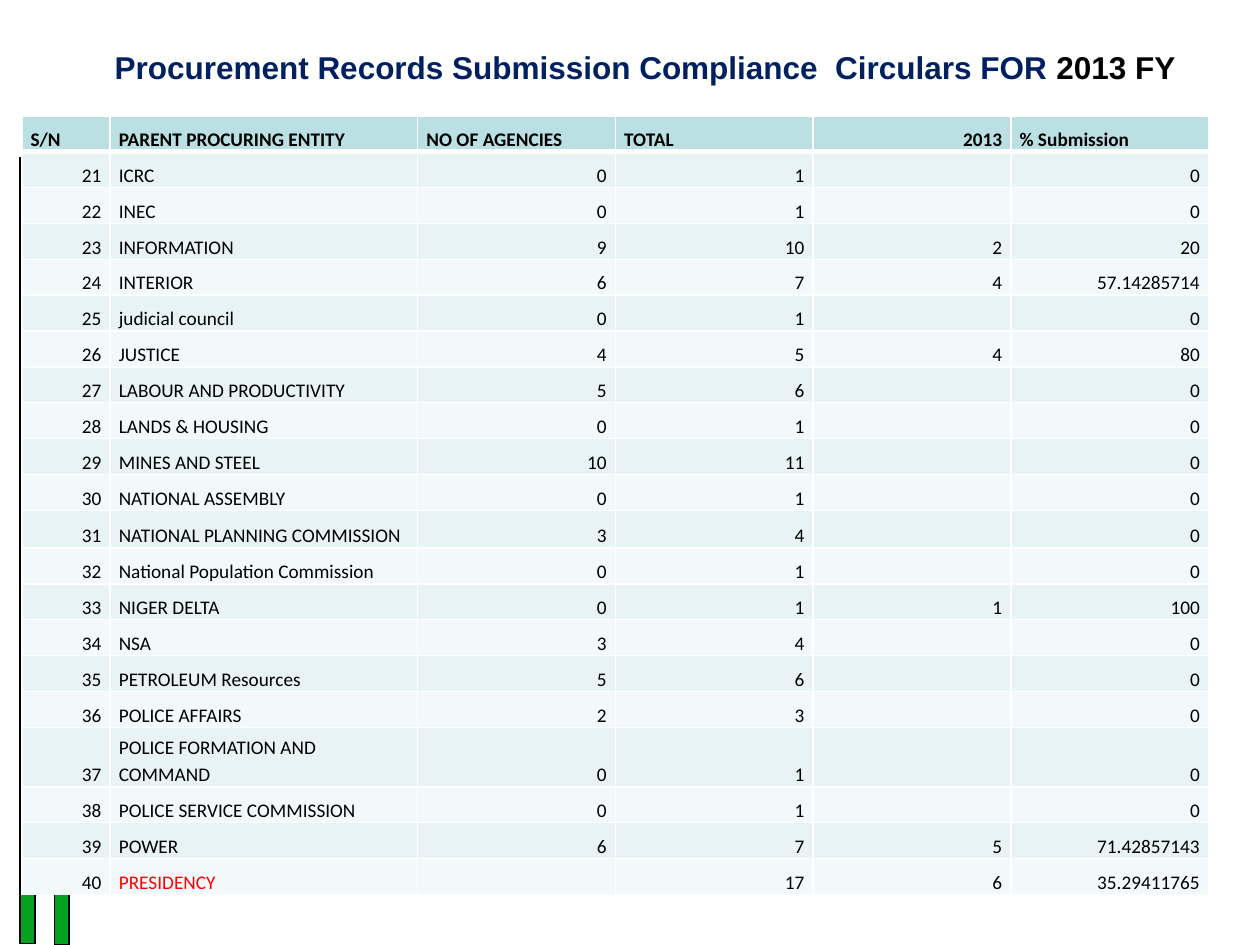
from pptx import Presentation
from pptx.dml.color import RGBColor as RGB
from pptx.enum.shapes import MSO_SHAPE as SHAPE
from pptx.enum.text import MSO_ANCHOR as ANCHOR, PP_ALIGN as ALIGN
from pptx.oxml import parse_xml
from pptx.oxml.ns import nsdecls
from pptx.util import Pt


class Theme:
    navy = RGB(0x00, 0x20, 0x60)
    black = RGB(0x00, 0x00, 0x00)
    red = RGB(0xFF, 0x00, 0x00)
    green = RGB(0x07, 0xA1, 0x21)
    header = RGB(0xBB, 0xE0, 0xE3)
    bands = [RGB(0xF3, 0xF9, 0xFA), RGB(0xE7, 0xF3, 0xF4)]
    border = "FFFFFF"
    title_font, title_size = "Arial", Pt(18)
    table_font, table_size = "Calibri", Pt(11)


HEADINGS = ["S/N", "PARENT PROCURING ENTITY", "NO OF AGENCIES", "TOTAL", "2013", "% Submission"]
FIRST_NUMBER = 21
# Entity, agencies, total, 2013, % submission
ENTITIES = [
    ("ICRC", "0", "1", "", "0"),
    ("INEC", "0", "1", "", "0"),
    ("INFORMATION", "9", "10", "2", "20"),
    ("INTERIOR", "6", "7", "4", "57.14285714"),
    ("judicial council", "0", "1", "", "0"),
    ("JUSTICE", "4", "5", "4", "80"),
    ("LABOUR AND PRODUCTIVITY", "5", "6", "", "0"),
    ("LANDS & HOUSING", "0", "1", "", "0"),
    ("MINES AND STEEL", "10", "11", "", "0"),
    ("NATIONAL ASSEMBLY", "0", "1", "", "0"),
    ("NATIONAL PLANNING COMMISSION", "3", "4", "", "0"),
    ("National Population Commission", "0", "1", "", "0"),
    ("NIGER DELTA", "0", "1", "1", "100"),
    ("NSA", "3", "4", "", "0"),
    ("PETROLEUM Resources", "5", "6", "", "0"),
    ("POLICE AFFAIRS", "2", "3", "", "0"),
    ("POLICE FORMATION AND COMMAND", "0", "1", "", "0"),
    ("POLICE SERVICE COMMISSION", "0", "1", "", "0"),
    ("POWER", "6", "7", "5", "71.42857143"),
    ("PRESIDENCY", "", "17", "6", "35.29411765"),
]
COLUMN_WIDTHS = [50.4, 175.8] + [113] * 4
ROW_HEIGHT = 20.5
TALL_ROWS = {11: 21.5, 17: 34}


def set_border(cell, side, width):
    cell._tc.get_or_add_tcPr().append(parse_xml(
        f'<a:{side} {nsdecls("a")} w="{Pt(width)}"><a:solidFill>'
        f'<a:srgbClr val="{Theme.border}"/></a:solidFill></a:{side}>'))


prs = Presentation()
prs.slide_width, prs.slide_height = Pt(720), Pt(540)
s = prs.slides.add_slide(prs.slide_layouts[5])

# Green bars at the left edge
for left, top in [(11.5, 90), (31, 90.7)]:
    sp = s.shapes.add_shape(SHAPE.RECTANGLE, Pt(left), Pt(top), Pt(8.5), Pt(449.3))
    sp.shadow.inherit = False
    sp.fill.solid()
    sp.fill.fore_color.rgb = Theme.green
    sp.line.color.rgb = Theme.black
    sp.line.width = Pt(0.75)

# Compliance table
rows = [HEADINGS] + [(str(n), *entity) for n, entity in enumerate(ENTITIES, FIRST_NUMBER)]
heights = [TALL_ROWS.get(i, ROW_HEIGHT) for i in range(len(rows))]
table = s.shapes.add_table(len(rows), len(HEADINGS), Pt(12.5), Pt(66.2),
                           Pt(sum(COLUMN_WIDTHS)), Pt(sum(heights))).table
table.horz_banding = False
for column, width in zip(table.columns, COLUMN_WIDTHS):
    column.width = Pt(width)
for i, values in enumerate(rows):
    table.rows[i].height = Pt(heights[i])
    for j, value in enumerate(values):
        cell = table.cell(i, j)
        for side in ("lnL", "lnR", "lnT", "lnB"):
            under_header = (i, side) in [(0, "lnB"), (1, "lnT")]
            set_border(cell, side, 3 if under_header else 1)
        cell.fill.solid()
        cell.fill.fore_color.rgb = Theme.bands[i % 2] if i else Theme.header
        cell.vertical_anchor = ANCHOR.BOTTOM
        cell.margin_left = cell.margin_right = Pt(5)
        cell.margin_top = cell.margin_bottom = 0
        p = cell.text_frame.paragraphs[0]
        p.line_spacing = 1.15
        p.alignment = ALIGN.RIGHT if value.isdigit() or (i and j != 1) else ALIGN.LEFT
        if not value:
            # An empty cell takes its height from the paragraph end mark
            p._p.get_or_add_endParaRPr().set("sz", str(int(Theme.table_size.pt * 100)))
            continue
        p.text = value
        font = p.runs[0].font
        font.name, font.size, font.bold = Theme.table_font, Theme.table_size, i == 0
        font.color.rgb = Theme.red if value == "PRESIDENCY" else Theme.black

# Title
title = s.shapes.title
title.left, title.top, title.width, title.height = Pt(44.6), Pt(22.3), Pt(648), Pt(32.4)
tf = title.text_frame
tf.vertical_anchor = ANCHOR.MIDDLE
p = tf.paragraphs[0]
p.alignment = ALIGN.CENTER
for text, color in [("Procurement Records Submission Compliance  Circulars FOR ", Theme.navy),
                    ("2013 FY", Theme.black)]:
    r = p.add_run()
    r.text = text
    r.font.name, r.font.size, r.font.bold = Theme.title_font, Theme.title_size, True
    r.font.color.rgb = color

prs.save("out.pptx")
